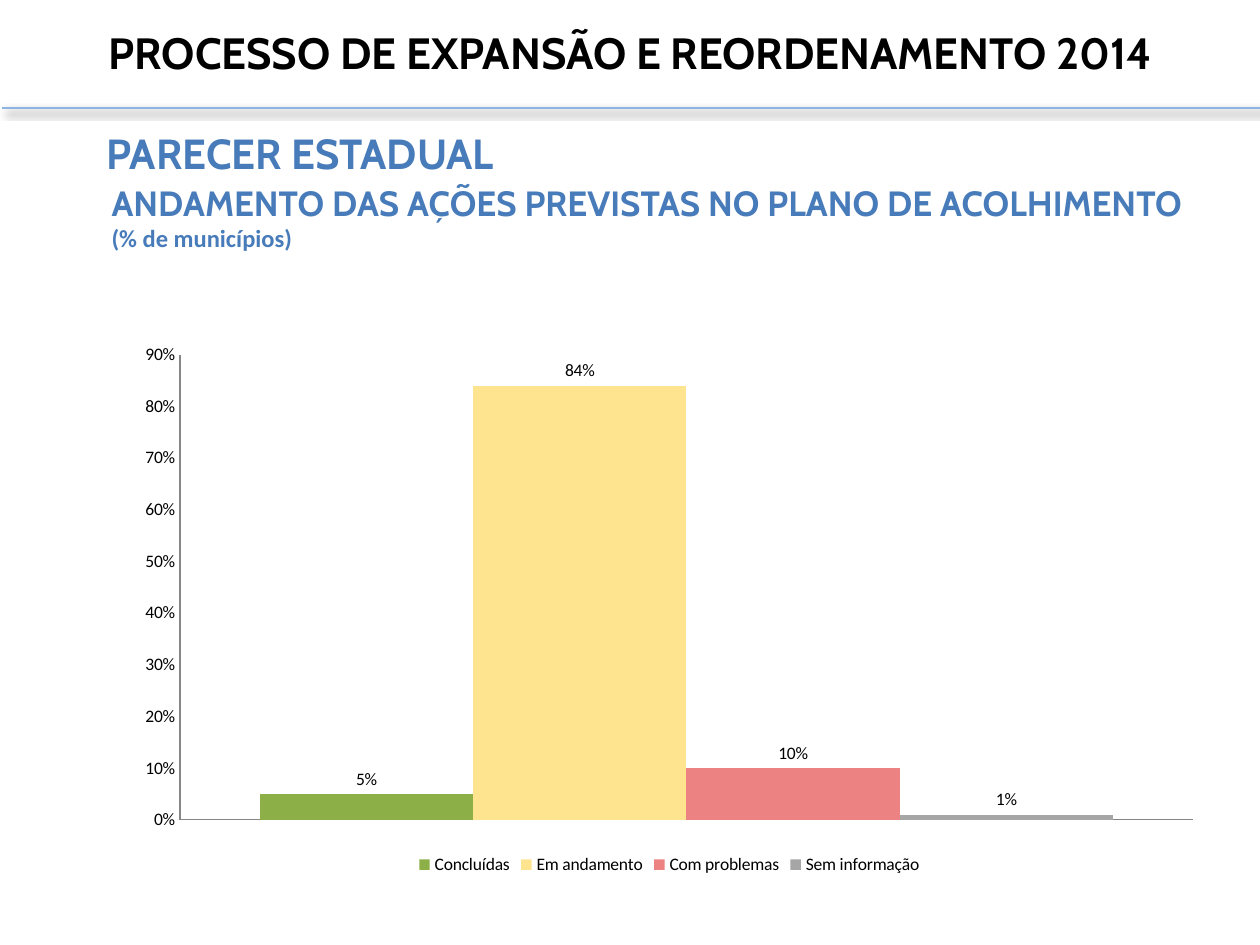
from lxml.etree import SubElement
from pptx import Presentation
from pptx.chart.data import CategoryChartData
from pptx.dml.color import RGBColor
from pptx.enum.chart import (XL_CHART_TYPE, XL_LABEL_POSITION,
                             XL_LEGEND_POSITION, XL_TICK_LABEL_POSITION,
                             XL_TICK_MARK)
from pptx.enum.shapes import MSO_CONNECTOR
from pptx.enum.text import MSO_ANCHOR, PP_ALIGN
from pptx.oxml.ns import qn
from pptx.util import Cm, Pt

BLUE = "477BB9"
SERIES = [
    ("Concluídas", 0.05, "8CAF47"),
    ("Em andamento", 0.84, "FFE48F"),
    ("Com problemas", 0.1, "EC8282"),
    ("Sem informação", 0.01, "A6A6A6"),
]


def color(code):
    return RGBColor.from_string(code)


def shadow(parent):
    effects = SubElement(parent, qn("a:effectLst"))
    outer = SubElement(effects, qn("a:outerShdw"), blurRad=str(Pt(4)),
                       dist=str(Pt(3)), dir="2700000", algn="tl",
                       rotWithShape="0")
    tint = SubElement(outer, qn("a:srgbClr"), val="000000")
    SubElement(tint, qn("a:alpha"), val="40000")


def frame(slide, box, anchor=MSO_ANCHOR.TOP, wrap=True):
    body = slide.shapes.add_textbox(*map(Cm, box)).text_frame
    body.word_wrap = wrap
    body.vertical_anchor = anchor
    return body


def write(para, text, size=20, fill=BLUE, font="Cabin", align=PP_ALIGN.LEFT,
          before=0, shade=False):
    para.alignment = align
    para.space_before = Pt(before)
    run = para.add_run()
    run.text = text
    run.font.size = Pt(size)
    run.font.bold = True
    run.font.color.rgb = color(fill)
    if shade:
        shadow(run.font._element)
    run.font.name = font


def header(slide, box):
    left, top, width, height = box
    body = frame(slide, (left, top, width, height - 0.08),
                 MSO_ANCHOR.MIDDLE, False)
    write(body.paragraphs[0], "PROCESSO DE EXPANSÃO E REORDENAMENTO 2014",
          size=25, fill="000000", align=PP_ALIGN.CENTER, shade=True)
    base = Cm(top + height)
    rule = slide.shapes.add_connector(MSO_CONNECTOR.STRAIGHT, Cm(left + 0.05),
                                      base, Cm(left + width + 0.08), base)
    rule.line.color.rgb = color("8EB4E3")
    rule.line.width = Pt(1.5)
    shadow(rule._element.spPr)


def heading(slide, box):
    left, top, width, height = box
    title = frame(slide, (left, top, 18.2, 1.8), MSO_ANCHOR.MIDDLE)
    write(title.paragraphs[0], "PARECER ESTADUAL", size=24, before=12)
    body = frame(slide, (left + 0.1, top + 1.35, width - 0.1, height - 1.35))
    write(body.paragraphs[0],
          "ANDAMENTO DAS AÇÕES PREVISTAS NO PLANO DE ACOLHIMENTO")
    write(body.add_paragraph(), "(% de municípios)", size=14, font="Calibri")


def bars(slide, box):
    data = CategoryChartData(number_format="0%")
    data.categories = ["1"]
    for name, value, _ in SERIES:
        data.add_series(name, [value])
    chart = slide.shapes.add_chart(XL_CHART_TYPE.COLUMN_CLUSTERED,
                                   *map(Cm, box), data).chart
    chart.has_title = False
    chart.font.name = "Calibri"
    chart.font.size = Pt(10)
    chart.font.color.rgb = color("000000")
    chart.has_legend = True
    chart.legend.position = XL_LEGEND_POSITION.BOTTOM
    chart.legend.include_in_layout = False

    for axis in (chart.category_axis, chart.value_axis):
        axis.has_major_gridlines = False
        axis.major_tick_mark = XL_TICK_MARK.NONE
        axis.minor_tick_mark = XL_TICK_MARK.NONE
        axis.format.line.color.rgb = color("868686")
    chart.category_axis.tick_label_position = XL_TICK_LABEL_POSITION.NONE
    scale = chart.value_axis
    scale.minimum_scale = 0
    scale.maximum_scale = 0.9
    scale.major_unit = 0.1
    scale.tick_labels.number_format = "0%"
    scale.tick_labels.number_format_is_linked = False

    plot = chart.plots[0]
    plot.gap_width = 75
    plot.overlap = 0
    plot.vary_by_categories = False
    for series, (_, _, fill) in zip(plot.series, SERIES):
        series.format.fill.solid()
        series.format.fill.fore_color.rgb = color(fill)
        labels = series.data_labels
        labels.show_value = True
        labels.number_format = "0%"
        labels.number_format_is_linked = False
        labels.position = XL_LABEL_POSITION.OUTSIDE_END


def main():
    deck = Presentation()
    deck.slide_width = Cm(25.4)
    deck.slide_height = Cm(19.05)
    slide = deck.slides.add_slide(deck.slide_layouts[6])
    header(slide, (0, 0, 25.4, 2.18))
    heading(slide, (1.9, 2.18, 22.2, 3.05))
    bars(slide, (2.49, 6.73, 22, 11))
    deck.save("out.pptx")


if __name__ == "__main__":
    main()
